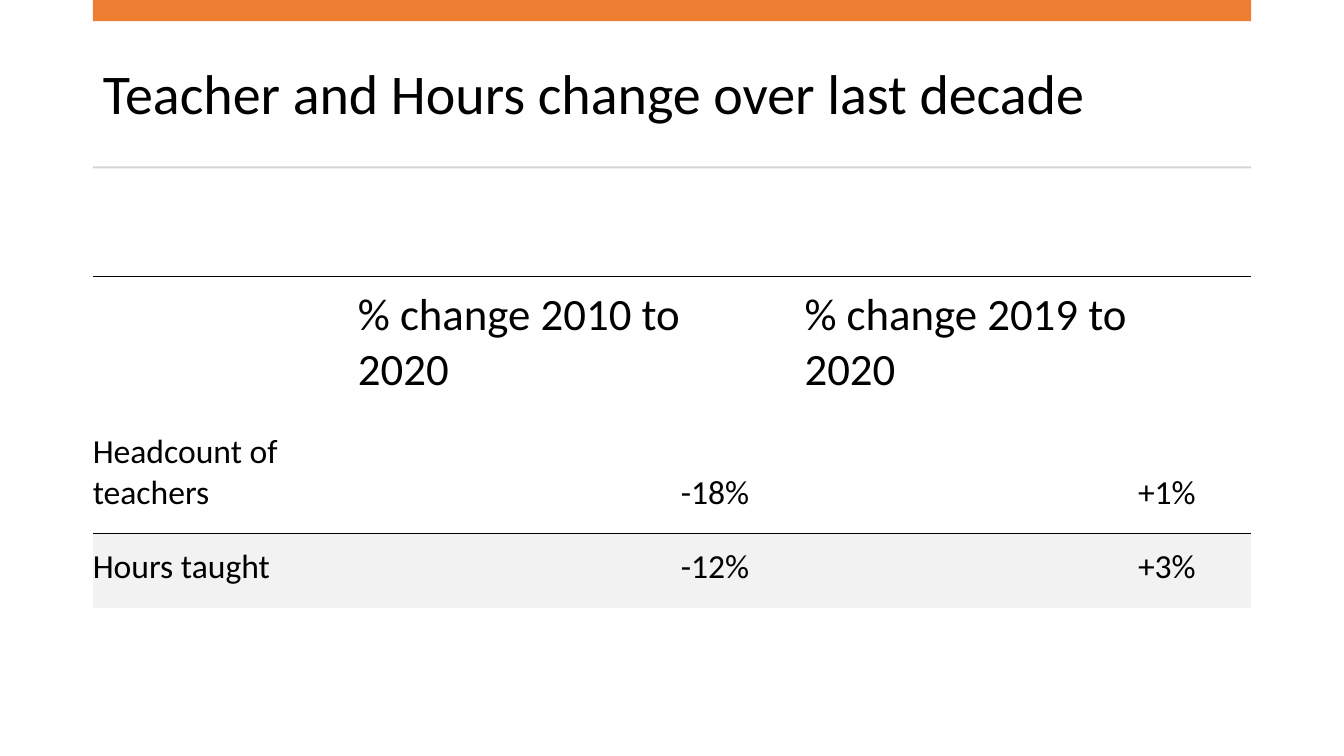
import pptx
import pptx.util
import pptx.dml.color
import pptx.enum.shapes
import pptx.enum.text
import pptx.oxml.ns
from dataclasses import dataclass
from lxml import etree

Inches = pptx.util.Inches
Pt = pptx.util.Pt

# Content
TITLE = "Teacher and Hours change over last decade"
ROWS = [
    ["", "% change 2010 to 2020", "% change 2019 to 2020"],
    ["Headcount of teachers", "-18%", "+1%"],
    ["Hours taught", "-12%", "+3%"],
]
COLUMN_WIDTHS = [2.63, 4.43, 4.43]
ROW_HEIGHTS = [1.4, 1.15, 0.74]
RULED_EDGES = {0, 2}  # horizontal table edges that carry a line
SHADED_ROW = 2
LEFT, WIDTH = 0.92, 11.49
BARS = [(0, 0.21, "accent"), (1.65, 0.02, "divider")]


@dataclass
class Theme:
    font: str = "Calibri"
    text: str = "000000"
    accent: str = "ED7D31"
    divider: str = "D5D5D5"
    shade: str = "F2F2F2"
    title_size: int = 40
    header_size: int = 32
    body_size: int = 24
    rule_width: float = 0.75


theme = Theme()


def rgb(value):
    return pptx.dml.color.RGBColor.from_string(value)


def write(paragraph, text, size):
    run = paragraph.add_run()
    run.text = text
    run.font.name = theme.font
    run.font.size = Pt(size)
    run.font.color.rgb = rgb(theme.text)


def set_borders(cell, ruled_tags):
    """Draw the named borders and clear the others."""
    properties = cell._tc.get_or_add_tcPr()
    for position, tag in enumerate(("lnL", "lnR", "lnT", "lnB")):
        line = etree.Element(pptx.oxml.ns.qn("a:" + tag), w=str(Pt(theme.rule_width)))
        if tag in ruled_tags:
            fill = etree.SubElement(line, pptx.oxml.ns.qn("a:solidFill"))
            etree.SubElement(fill, pptx.oxml.ns.qn("a:srgbClr"), val=theme.text)
        else:
            etree.SubElement(line, pptx.oxml.ns.qn("a:noFill"))
        properties.insert(position, line)


def add_title(slide):
    title = slide.shapes.title
    title.left, title.top = Inches(LEFT), Inches(0.37)
    title.width, title.height = Inches(WIDTH), Inches(1.18)
    frame = title.text_frame
    frame.word_wrap = True
    frame.vertical_anchor = pptx.enum.text.MSO_ANCHOR.MIDDLE
    paragraph = frame.paragraphs[0]
    paragraph.alignment = pptx.enum.text.PP_ALIGN.LEFT
    paragraph.line_spacing = 0.9
    write(paragraph, TITLE, theme.title_size)


def add_bars(slide):
    for top, height, color in BARS:
        bar = slide.shapes.add_shape(
            pptx.enum.shapes.MSO_SHAPE.RECTANGLE,
            Inches(LEFT), Inches(top), Inches(WIDTH), Inches(height))
        bar.shadow.inherit = False
        bar.fill.solid()
        bar.fill.fore_color.rgb = rgb(getattr(theme, color))
        bar.line.fill.background()


def format_cell(cell, text, row, column):
    is_header = row == 0
    cell.vertical_anchor = pptx.enum.text.MSO_ANCHOR.BOTTOM
    cell.margin_left, cell.margin_right = Inches(0), Inches(0.55)
    cell.margin_top = Inches(0.04 if is_header else 0.06)
    cell.margin_bottom = Inches(0.2)
    if row == SHADED_ROW:
        cell.fill.solid()
        cell.fill.fore_color.rgb = rgb(theme.shade)
    else:
        cell.fill.background()
    edges = {"lnT": row, "lnB": row + 1}
    set_borders(cell, {tag for tag, edge in edges.items() if edge in RULED_EDGES})
    paragraph = cell.text_frame.paragraphs[0]
    if column and not is_header:
        paragraph.alignment = pptx.enum.text.PP_ALIGN.RIGHT
    if text:
        write(paragraph, text, theme.header_size if is_header else theme.body_size)


def add_change_table(slide):
    table = slide.shapes.add_table(
        len(ROWS), len(COLUMN_WIDTHS), Inches(LEFT), Inches(2.74),
        Inches(WIDTH), Inches(sum(ROW_HEIGHTS))).table
    table.first_row = False
    table.horz_banding = False
    for column, width in zip(table.columns, COLUMN_WIDTHS):
        column.width = Inches(width)
    for row, height in zip(table.rows, ROW_HEIGHTS):
        row.height = Inches(height)
    for row, texts in enumerate(ROWS):
        for column, text in enumerate(texts):
            format_cell(table.cell(row, column), text, row, column)


def main():
    presentation = pptx.Presentation()
    presentation.slide_width, presentation.slide_height = Inches(13.33), Inches(7.5)
    slide = presentation.slides.add_slide(presentation.slide_layouts[5])
    add_title(slide)
    add_bars(slide)
    add_change_table(slide)
    presentation.save("out.pptx")


if __name__ == "__main__":
    main()
